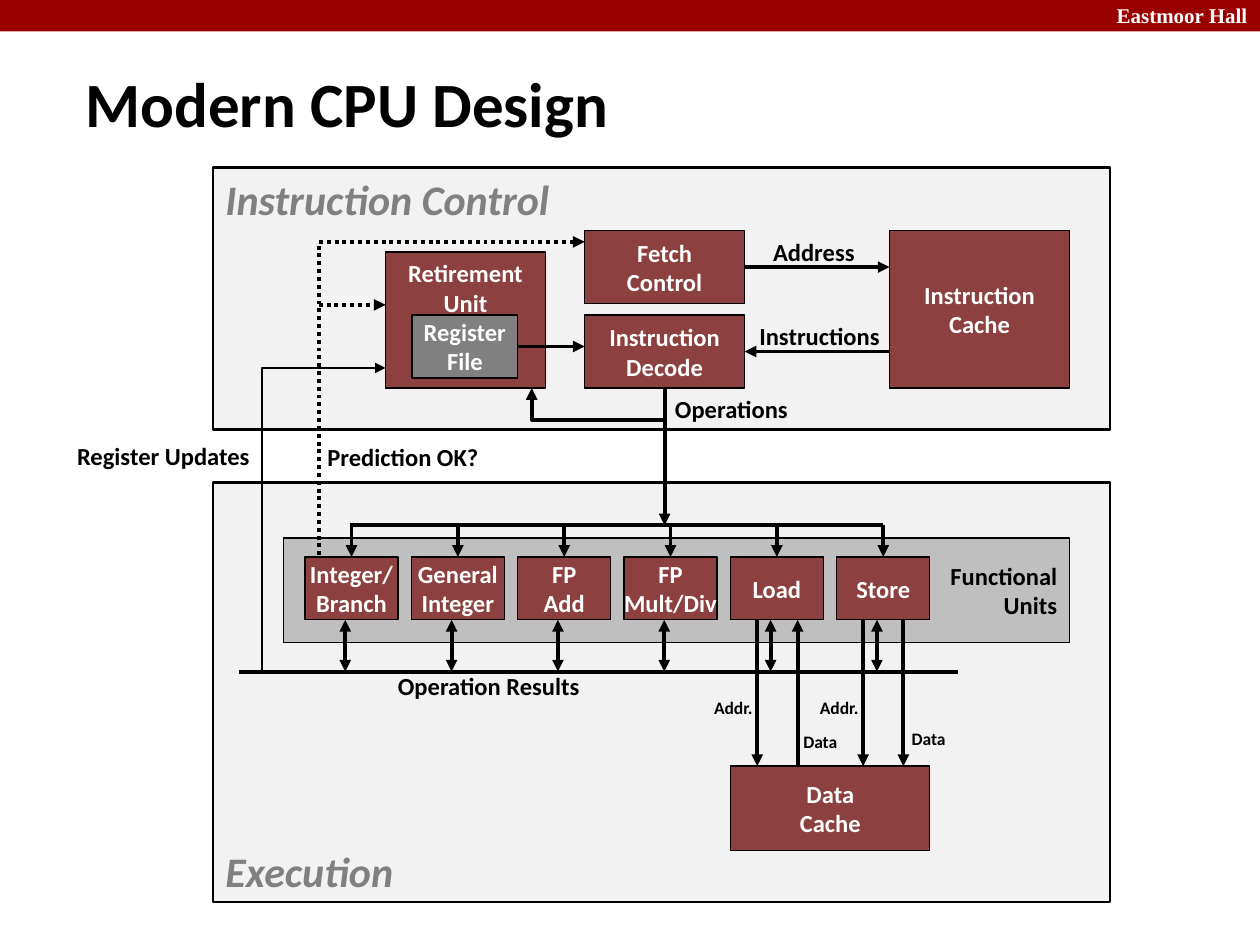
from dataclasses import dataclass

from lxml import etree
from pptx import Presentation
from pptx import util as u
from pptx.dml.color import RGBColor
from pptx.enum import dml, shapes, text
from pptx.oxml import ns


@dataclass(frozen=True)
class Theme:
    """Colours, fonts, type sizes and line widths of the slide."""
    banner: str = "990000"
    panel: str = "F2F2F2"
    band: str = "BFBFBF"
    block: str = "8C4040"
    grey: str = "808080"
    black: str = "000000"
    white: str = "FFFFFF"
    font: str = "Calibri"
    banner_font: str = "Times New Roman"
    title_size: int = 36
    panel_size: int = 24
    body_size: int = 14
    banner_size: int = 12
    small_size: int = 10
    thin: float = 0.75
    medium: float = 1.5
    thick: float = 2.25


THEME = Theme()
LEFT, CENTER, RIGHT = text.PP_ALIGN.LEFT, text.PP_ALIGN.CENTER, text.PP_ALIGN.RIGHT
TOP, MIDDLE, BOTTOM = text.MSO_ANCHOR.TOP, text.MSO_ANCHOR.MIDDLE, text.MSO_ANCHOR.BOTTOM
SIDE_TOP, SIDE_RIGHT, SIDE_BOTTOM = 0, 3, 2

UNITS = ["Integer/\nBranch", "General\nInteger", "FP\nAdd", "FP\nMult/Div", "Load", "Store"]
UNIT_LEFT, UNIT_TOP, UNIT_WIDTH, UNIT_HEIGHT = 2.42, 4.42, 0.74, 0.5
UNIT_PITCH = (6.64 - UNIT_LEFT) / 5
UNIT_BOTTOM = UNIT_TOP + UNIT_HEIGHT
ISSUE_Y, RESULT_Y, CACHE_Y = 4.17, 5.33, 6.08


def inches(values):
    """Convert plain numbers to lengths."""
    return [u.Inches(value) for value in values]


def write(box, words, size=THEME.body_size, color=THEME.white, align=CENTER,
          anchor=MIDDLE, font=THEME.font, italic=False):
    """Put bold, unwrapped text into a box."""
    frame = box.text_frame
    frame.text = words
    frame.word_wrap = False
    frame.vertical_anchor = anchor
    for para in frame.paragraphs:
        para.alignment = align
        for span in para.runs:
            span.font.name = font
            span.font.size = u.Pt(size)
            span.font.bold = True
            span.font.italic = italic
            span.font.color.rgb = RGBColor.from_string(color)


def add_box(page, place, fill, width=None):
    """Add a filled rectangle, outlined when a line width is given."""
    box = page.shapes.add_shape(shapes.MSO_SHAPE.RECTANGLE, *inches(place))
    box.shadow.inherit = False
    box.fill.solid()
    box.fill.fore_color.rgb = RGBColor.from_string(fill)
    if width is None:
        box.line.fill.background()
    else:
        box.line.color.rgb = RGBColor.from_string(THEME.black)
        box.line.width = u.Pt(width)
    return box


def add_panel(page, place, words, anchor):
    """Add a large stage panel with its heading."""
    box = add_box(page, place, THEME.panel, THEME.medium)
    write(box, words, THEME.panel_size, THEME.grey, LEFT, anchor, italic=True)


def add_block(page, place, words, fill=THEME.block, anchor=MIDDLE):
    """Add a hardware block with centred text."""
    box = add_box(page, place, fill, THEME.thin)
    write(box, words, anchor=anchor)
    return box


def add_label(page, place, words, size=THEME.body_size, align=CENTER):
    """Add a free label that fits its text."""
    box = page.shapes.add_textbox(*inches(place))
    write(box, words, size, THEME.black, align, TOP)
    box.text_frame.auto_size = text.MSO_AUTO_SIZE.SHAPE_TO_FIT_TEXT


def style_line(wire, width, head, tail, dotted):
    """Set colour, width, dash and arrowheads of a line."""
    wire.line.color.rgb = RGBColor.from_string(THEME.black)
    wire.line.width = u.Pt(width)
    if dotted:
        wire.line.dash_style = dml.MSO_LINE.ROUND_DOT
    stroke = wire.element.spPr.find(ns.qn("a:ln"))
    for tag, wanted in (("a:headEnd", head), ("a:tailEnd", tail)):
        if wanted:
            etree.SubElement(stroke, ns.qn(tag), type="triangle")


def add_wire(page, start, end, head=False, tail=True, dotted=False):
    """Add a straight line, an arrow unless told otherwise."""
    wire = page.shapes.add_connector(shapes.MSO_CONNECTOR.STRAIGHT, *inches(start + end))
    style_line(wire, THEME.thick, head, tail, dotted)
    etree.SubElement(wire.element.spPr, ns.qn("a:effectLst"))
    return wire


def add_bent_wire(page, points, width=THEME.thick, head=False, tail=False, dotted=False):
    """Add an open bent line through the points."""
    start, *rest = [inches(point) for point in points]
    builder = page.shapes.build_freeform(*start)
    builder.add_line_segments(rest, close=False)
    wire = builder.convert_to_shape()
    wire.shadow.inherit = False
    wire.fill.background()
    style_line(wire, width, head, tail, dotted)


def add_heading(page):
    """Add the banner and the title."""
    add_box(page, (0, 0, 10, 0.25), THEME.banner)
    name = page.shapes.add_textbox(*inches((8.5, -0.03, 1.5, 0.3)))
    write(name, "Eastmoor Hall", THEME.banner_size, THEME.white, RIGHT, TOP, THEME.banner_font)
    title = page.shapes.add_textbox(*inches((0.58, 0.5, 6.41, 0.63)))
    write(title, "Modern CPU Design", THEME.title_size, THEME.black, LEFT)


def add_control(page):
    """Add the instruction control blocks and wires, ending with the issue arrow."""
    cache = (7.06, 1.83, 1.43, 1.25)
    add_block(page, cache, "Instruction\nCache")
    fetch = add_block(page, (4.64, 1.83, 1.27, 0.58), "Fetch\nControl")
    decode = add_block(page, (4.64, 2.5, 1.27, 0.58), "Instruction\nDecode")
    add_block(page, (3.06, 2, 1.27, 1.08), "Retirement\nUnit", anchor=TOP)
    register = add_block(page, (3.27, 2.5, 0.84, 0.5), "Register\nFile", THEME.grey)
    add_wire(page, (5.91, 2.12), (7.06, 2.12)).begin_connect(fetch, SIDE_RIGHT)
    add_wire(page, (7.06, 2.79), (5.91, 2.79)).end_connect(decode, SIDE_RIGHT)
    add_wire(page, (4.11, 2.75), (4.64, 2.75)).begin_connect(register, SIDE_RIGHT)
    center = 4.64 + 1.27 / 2
    add_wire(page, (center, 3.08), (center, ISSUE_Y)).begin_connect(decode, SIDE_BOTTOM)
    add_bent_wire(page, [(center, 3.33), (4.22, 3.33), (4.22, 3.08)], tail=True)


def add_units(page):
    """Add the functional units with their issue and result arrows."""
    for index, words in enumerate(UNITS):
        left = UNIT_LEFT + index * UNIT_PITCH
        center, port = left + UNIT_WIDTH / 2, left + 0.32
        unit = add_block(page, (left, UNIT_TOP, UNIT_WIDTH, UNIT_HEIGHT), words)
        add_wire(page, (center, ISSUE_Y), (center, UNIT_TOP)).end_connect(unit, SIDE_TOP)
        add_wire(page, (port, UNIT_BOTTOM), (port, RESULT_Y), head=True)
    add_wire(page, (2.78, ISSUE_Y), (7.01, ISSUE_Y), tail=False)
    add_wire(page, (1.9, RESULT_Y), (7.6, RESULT_Y), tail=False)


def add_memory(page):
    """Add the data cache and its address and data arrows."""
    add_block(page, (5.8, CACHE_Y, 1.58, 0.67), "Data\nCache")
    for x in (6.01, 6.85, 7.17):
        add_wire(page, (x, UNIT_BOTTOM), (x, CACHE_Y))
    add_wire(page, (6.33, CACHE_Y), (6.33, UNIT_BOTTOM))
    for place, words in [((7.13, 5.73, 0.48, 0.27), "Data"), ((6.27, 5.75, 0.48, 0.27), "Data"),
                         ((5.56, 5.48, 0.52, 0.27), "Addr."), ((6.4, 5.48, 0.52, 0.27), "Addr.")]:
        add_label(page, place, words, THEME.small_size)


def add_feedback(page):
    """Add the prediction and register update paths."""
    add_bent_wire(page, [(4.64, 1.92), (2.53, 1.92), (2.53, UNIT_TOP)], head=True, dotted=True)
    add_wire(page, (2.53, 2.42), (3.06, 2.42), dotted=True)
    add_bent_wire(page, [(3.06, 2.92), (2.08, 2.92), (2.08, RESULT_Y)], THEME.medium, head=True)


def main():
    """Build and save the slide."""
    deck = Presentation()
    deck.slide_width, deck.slide_height = inches((10, 7.5))
    page = deck.slides.add_slide(deck.slide_layouts[6])
    add_heading(page)
    add_panel(page, (1.69, 3.83, 7.12, 3.33), "Execution", BOTTOM)
    band = add_box(page, (2.25, 4.27, 6.24, 0.83), THEME.band, THEME.thin)
    write(band, "Functional\nUnits", color=THEME.black, align=RIGHT)
    add_panel(page, (1.69, 1.33, 7.12, 2.08), "Instruction Control", TOP)
    add_control(page)
    add_units(page)
    add_memory(page)
    add_feedback(page)
    for left, top, width, words, align in [
            (6.03, 1.83, 0.86, "Address", CENTER), (5.92, 2.5, 1.17, "Instructions", CENTER),
            (5.25, 3.08, 1.11, "Operations", CENTER), (2.5, 3.46, 1.41, "Prediction OK?", LEFT),
            (3.06, 5.28, 1.66, "Operation Results", LEFT),
            (0.5, 3.45, 1.58, "Register Updates", RIGHT)]:
        add_label(page, (left, top, width, 0.34), words, align=align)
    deck.save("out.pptx")


if __name__ == "__main__":
    main()
